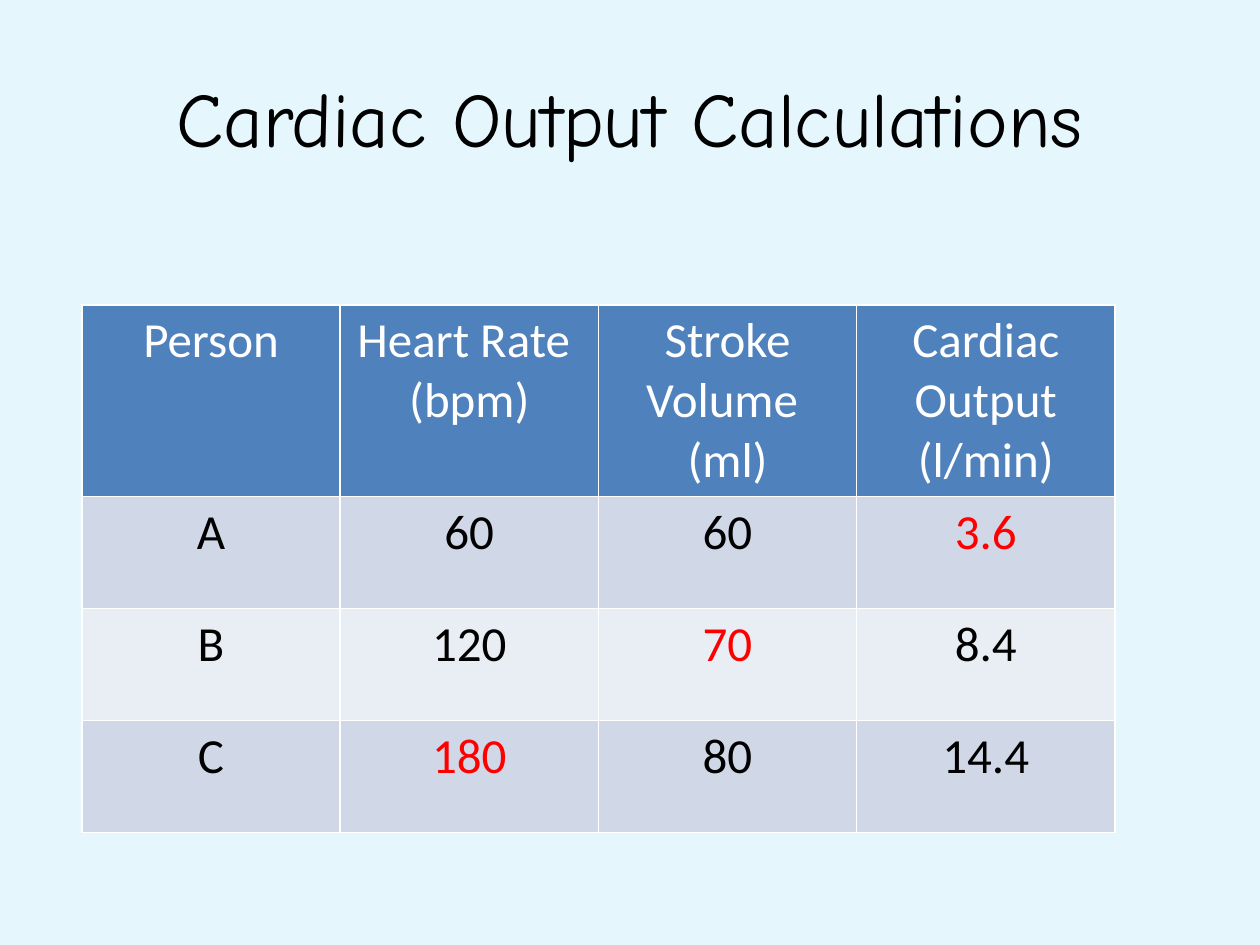
from pptx import Presentation, util as u
from pptx.dml.color import RGBColor
from pptx.enum import text
from pptx.oxml import parse_xml
from pptx.oxml.ns import nsdecls


def rgb(h):
    return RGBColor.from_string(h)


def fmt(p, font, size, color):
    p.alignment = text.PP_ALIGN.CENTER
    for r in p.runs:
        r.font.name = font
        r.font.size = u.Pt(size)
        r.font.bold = False
        r.font.color.rgb = rgb(color)


prs = Presentation()
prs.slide_width, prs.slide_height = u.Inches(10), u.Inches(7.5)
s = prs.slides.add_slide(prs.slide_layouts[6])
s.background.fill.solid()
s.background.fill.fore_color.rgb = rgb("E5F7FD")

title = s.shapes.add_textbox(u.Inches(0.5), u.Inches(0.3), u.Inches(9), u.Inches(1.25))
tf = title.text_frame
tf.word_wrap = True
tf.vertical_anchor = text.MSO_ANCHOR.MIDDLE
tf.text = "Cardiac Output Calculations"
fmt(tf.paragraphs[0], "Comic Neue", 44, "000000")

rows = [
    ["Person", "Heart Rate \n(bpm)", "Stroke Volume \n(ml)", "Cardiac Output\n(l/min)"],
    ["A", "60", "60", "3.6"],
    ["B", "120", "70", "8.4"],
    ["C", "180", "80", "14.4"],
]
answers = {(1, 3), (2, 2), (3, 1)}
heights = [1.52, 0.89, 0.89, 0.89]
fills = ["4F81BD", "D0D8E8", "E9EDF4", "D0D8E8"]

table = s.shapes.add_table(4, 4, u.Inches(0.65), u.Inches(2.42),
                           u.Inches(8.2), u.Inches(sum(heights))).table
for col in table.columns:
    col.width = u.Inches(2.05)

for i, row in enumerate(rows):
    table.rows[i].height = u.Inches(heights[i])
    for j, value in enumerate(row):
        cell = table.cell(i, j)
        cell.margin_left = cell.margin_right = u.Inches(0.07)
        cell.margin_top = cell.margin_bottom = u.Inches(0.05)
        cell.fill.solid()
        cell.fill.fore_color.rgb = rgb(fills[i])
        cell.text_frame.text = value
        color = "FFFFFF" if i == 0 else "FF0000" if (i, j) in answers else "000000"
        for p in cell.text_frame.paragraphs:
            fmt(p, "Calibri", 28, color)
        # Border lines must come before the fill in the cell properties
        for k, side in enumerate("LRTB"):
            cell._tc.tcPr.insert(k, parse_xml(
                f'<a:ln{side} {nsdecls("a")} w="{u.Pt(1)}"><a:solidFill>'
                f'<a:srgbClr val="FFFFFF"/></a:solidFill></a:ln{side}>'))

prs.save("out.pptx")
